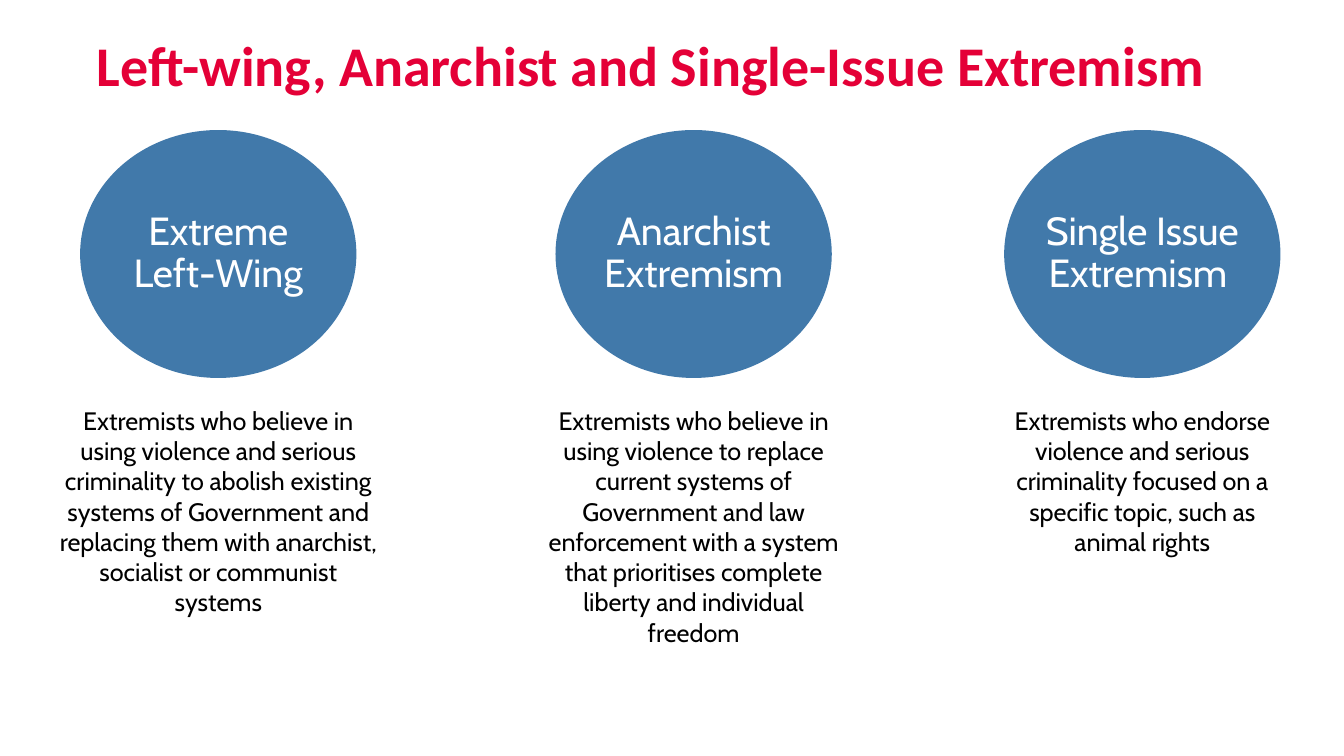
from pptx import Presentation
from pptx.dml.color import RGBColor
from pptx.enum.shapes import MSO_SHAPE as Shape
from pptx.enum.text import MSO_ANCHOR as Anchor, PP_ALIGN as Align
from pptx.util import Inches, Pt

COLORS = {"title": "E40037", "circle": "4179AA", "label": "FFFFFF", "body": "000000"}
TITLE = "Left-wing, Anarchist and Single-Issue Extremism"
CIRCLE_WIDTH, CIRCLE_HEIGHT = 2.74, 2.46
TEXT_OFFSET = 2.73
COLUMN_TOP = 1.29

COLUMNS = [
    (0.56, 3.21, 2.07, "Extreme Left-Wing",
     "Extremists who believe in using violence and serious criminality to abolish "
     "existing systems of Government and replacing them with anarchist, socialist "
     "or communist systems"),
    (5.35, 3.06, 2.46, "Anarchist Extremism",
     "Extremists who believe in using violence to replace current systems of "
     "Government and law enforcement with a system that prioritises complete "
     "liberty and individual freedom"),
    (9.96, 2.74, 1.71, "Single Issue Extremism ",
     "Extremists who endorse violence and serious criminality focused on a "
     "specific topic, such as animal rights"),
]


def write(shape, text, font, size, color, align, anchor, bold=False):
    frame = shape.text_frame
    frame.text = text
    frame.word_wrap = True
    frame.vertical_anchor = anchor
    frame.margin_left = frame.margin_right = 0
    frame.margin_top = frame.margin_bottom = 0
    para = frame.paragraphs[0]
    para.alignment = align
    span = para.runs[0]
    span.font.name = font
    span.font.size = Pt(size)
    span.font.bold = bold
    span.font.color.rgb = RGBColor.from_string(COLORS[color])
    return para


def add_title(page, left, top, width, height):
    title = page.shapes.title
    title.left, title.top = Inches(left), Inches(top)
    title.width, title.height = Inches(width), Inches(height)
    para = write(title, TITLE, "Calibri", 40, "title", Align.LEFT, Anchor.TOP, bold=True)
    para.line_spacing = 1.0
    para.space_before = Pt(0)


def add_column(page, left, top, width, text_height, label, description):
    circle_left = left + (width - CIRCLE_WIDTH) / 2
    circle = page.shapes.add_shape(
        Shape.OVAL, Inches(circle_left), Inches(top),
        Inches(CIRCLE_WIDTH), Inches(CIRCLE_HEIGHT))
    circle.shadow.inherit = False
    circle.fill.solid()
    circle.fill.fore_color.rgb = RGBColor.from_string(COLORS["circle"])
    circle.line.fill.background()
    para = write(circle, label, "Cabin", 28, "label", Align.CENTER, Anchor.MIDDLE)
    para.line_spacing = 0.9

    box = page.shapes.add_textbox(
        Inches(left), Inches(top + TEXT_OFFSET), Inches(width), Inches(text_height))
    para = write(box, description, "Cabin", 18, "body", Align.CENTER, Anchor.TOP)
    para.space_after = Pt(11.3)


def main():
    deck = Presentation()
    deck.slide_width, deck.slide_height = Inches(13.33), Inches(7.5)
    page = deck.slides.add_slide(deck.slide_layouts[5])
    add_title(page, 0.96, 0.3, 11.83, 1.16)
    for left, width, text_height, label, description in COLUMNS:
        add_column(page, left, COLUMN_TOP, width, text_height, label, description)
    deck.save("out.pptx")


if __name__ == "__main__":
    main()
